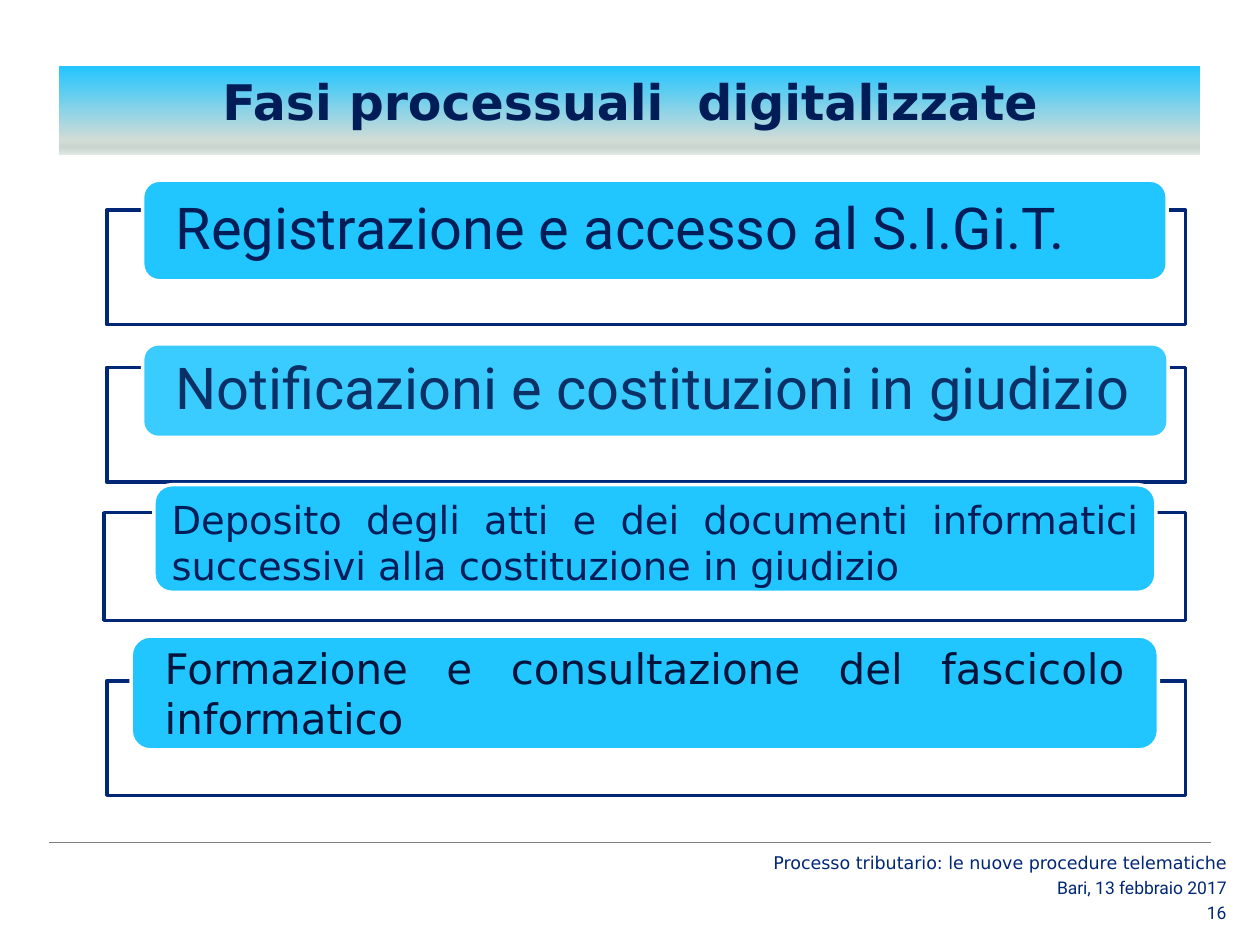
from lxml import etree
from pptx import Presentation
from pptx import util as u
from pptx.dml.color import RGBColor
from pptx.enum import shapes, text
from pptx.oxml import ns

NAVY, DEEP_NAVY, SKY, WHITE = "002776", "001D58", "21C5FF", "FFFFFF"
SANS, ROBOTO = "DejaVu Sans", "Roboto"
LEFT, CENTER, RIGHT, JUSTIFY = (text.PP_ALIGN.LEFT, text.PP_ALIGN.CENTER,
                                text.PP_ALIGN.RIGHT, text.PP_ALIGN.JUSTIFY)
TOP, MIDDLE = text.MSO_ANCHOR.TOP, text.MSO_ANCHOR.MIDDLE


def color(value):
    return RGBColor.from_string(value)


def write(shape, words, size, font=SANS, ink=NAVY, bold=False, align=LEFT,
          anchor=MIDDLE, side=7.2, edge=0, spacing=1.0):
    """Put one formatted paragraph into a shape."""
    frame = shape.text_frame
    frame.word_wrap = True
    frame.auto_size = text.MSO_AUTO_SIZE.NONE
    frame.vertical_anchor = anchor
    frame.margin_left = frame.margin_right = u.Pt(side)
    frame.margin_top = frame.margin_bottom = u.Pt(edge)
    para = frame.paragraphs[0]
    para.alignment = align
    para.line_spacing = spacing
    span = para.add_run()
    span.text = words
    span.font.name = font
    span.font.size = u.Pt(size)
    span.font.bold = bold
    span.font.color.rgb = color(ink)


class Painter:
    """Holds the current slide and the common outline weight."""

    def __init__(self, page, outline=2):
        self.page = page
        self.outline = outline

    def title(self, words, place, stops):
        box = self.page.shapes.title
        box.left, box.top, box.width, box.height = map(u.Pt, place)
        box.fill.gradient()
        box.fill.gradient_angle = 270
        stop_list = box._element.spPr.find(".//" + ns.qn("a:gsLst"))
        for stop in list(stop_list):
            stop_list.remove(stop)
        for percent, value in stops:
            stop = etree.SubElement(stop_list, ns.qn("a:gs"), pos=str(percent * 1000))
            etree.SubElement(stop, ns.qn("a:srgbClr"), val=value)
        write(box, words, 28, ink=DEEP_NAVY, bold=True, align=CENTER,
              anchor=TOP, edge=3.6)

    def block(self, kind, place, fill, line):
        box = self.page.shapes.add_shape(kind, *map(u.Pt, place))
        box.shadow.inherit = False
        box.fill.solid()
        box.fill.fore_color.rgb = color(fill)
        box.line.color.rgb = color(line)
        box.line.width = u.Pt(self.outline)
        return box

    def phase(self, frame, pill, words, fill=SKY, **style):
        self.block(shapes.MSO_SHAPE.RECTANGLE, frame, WHITE, NAVY)
        box = self.block(shapes.MSO_SHAPE.ROUNDED_RECTANGLE, pill, fill, WHITE)
        write(box, words, **style)

    def rule(self, left, right, top):
        line = self.page.shapes.add_connector(
            shapes.MSO_CONNECTOR.STRAIGHT, *map(u.Pt, (left, top, right, top)))
        line.line.color.rgb = color("808080")
        line.line.width = u.Pt(0.75)
        etree.SubElement(line._element.spPr, ns.qn("a:effectLst"))

    def label(self, place, words, **style):
        box = self.page.shapes.add_textbox(*map(u.Pt, place))
        write(box, words, **style)


def main():
    deck = Presentation()
    deck.slide_width, deck.slide_height = u.Pt(720), u.Pt(540)
    painter = Painter(deck.slides.add_slide(deck.slide_layouts[5]))

    # Title band
    painter.title("Fasi processuali  digitalizzate", (34, 37.5, 652, 51),
                  [(0, SKY), (84, "D2DCD6"), (92, "C9D5CE"), (100, "E2E8E4")])

    # Four phases: outlined frame with a rounded label on top
    large = dict(size=33, font=ROBOTO, side=16, spacing=0.9)
    painter.phase((61, 120, 616.5, 65.5), (81.5, 103, 585.5, 57.5),
                  "Registrazione e accesso al S.I.Gi.T.", ink=DEEP_NAVY, **large)
    painter.phase((61, 210, 616.5, 65.5), (81.5, 196.5, 586, 53.5),
                  "Notificazioni e costituzioni in giudizio",
                  fill="3BCCFF", ink="0B3066", **large)
    painter.phase((59.5, 293, 618, 61.5), (88, 277, 572.5, 61.5),
                  "Deposito degli atti e dei documenti informatici "
                  "successivi alla costituzione in giudizio",
                  size=22, ink=DEEP_NAVY, align=JUSTIFY, anchor=TOP, edge=3.6)
    painter.phase((61, 389, 616.5, 65.5), (75, 363.5, 587, 65),
                  "Formazione e consultazione del fascicolo informatico",
                  size=24, ink="00143B", align=JUSTIFY, side=16)

    # Footer
    painter.rule(28, 692, 481.5)
    footer = [("Processo tributario: le nuove procedure telematiche", SANS),
              ("Bari, 13 febbraio 2017", ROBOTO), ("16", ROBOTO)]
    for row, (words, font) in enumerate(footer):
        painter.label((428, 486 + 14.2 * row, 280, 14), words,
                      size=10, font=font, align=RIGHT)

    deck.save("out.pptx")


if __name__ == "__main__":
    main()
